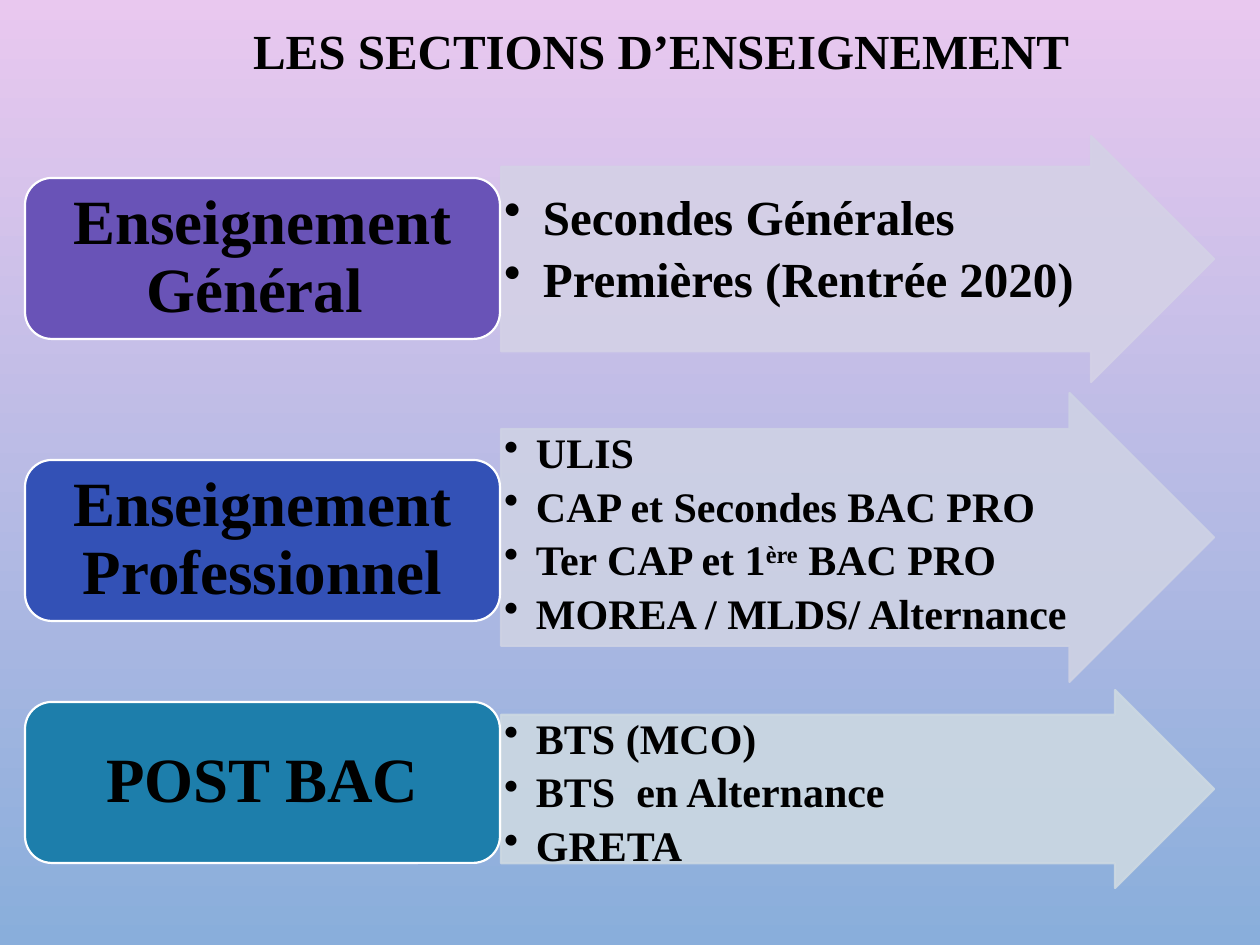
from lxml.etree import SubElement
from pptx import Presentation
from pptx.dml.color import RGBColor
from pptx.enum.shapes import MSO_SHAPE
from pptx.enum.text import MSO_ANCHOR, PP_ALIGN
from pptx.oxml.ns import qn
from pptx.util import Pt

TITLE = "LES SECTIONS D’ENSEIGNEMENT"
SECTIONS = [
    {"label": "Enseignement Général ", "color": "6953B7", "label_top": 178,
     "tint": "D4D1E6", "arrow_top": 136, "arrow_height": 246,
     "size": 28, "indent": 39, "inset_top": 26,
     "items": [["Secondes Générales"], ["Premières (Rentrée 2020)"]]},
    {"label": "Enseignement Professionnel", "color": "3351B6", "label_top": 460,
     "tint": "CED2E4", "arrow_top": 393, "arrow_height": 289,
     "size": 24, "indent": 32, "inset_top": 3,
     "items": [["ULIS"], ["CAP et Secondes BAC PRO"],
               ["Ter CAP et 1", "ère", " BAC PRO"],
               ["MOREA / MLDS/ Alternance"]]},
    {"label": "POST BAC", "color": "1D7EAB", "label_top": 702,
     "tint": "CCD8E2", "arrow_top": 690, "arrow_height": 198,
     "size": 24, "indent": 32, "inset_top": 3,
     "items": [["BTS (MCO)"], ["BTS  en Alternance"], ["GRETA"]]},
]
BACKGROUND = ["E9C8EF", "89AEDB"]
LABEL_LEFT, LABEL_WIDTH, LABEL_HEIGHT = 25, 475, 161
ARROW_LEFT, ARROW_WIDTH = 501, 713


def px(length):
    return round(length * 914400 / 126)


def rgb(value):
    return RGBColor.from_string(value)


def write(shape, paragraphs, size, align=PP_ALIGN.CENTER, anchor=MSO_ANCHOR.MIDDLE,
          insets=(19, 9, 19, 9), indent=0, after=0):
    frame = shape.text_frame
    frame.word_wrap = True
    frame.vertical_anchor = anchor
    (frame.margin_left, frame.margin_top,
     frame.margin_right, frame.margin_bottom) = map(px, insets)
    for index, parts in enumerate(paragraphs):
        paragraph = frame.add_paragraph() if index else frame.paragraphs[0]
        paragraph.alignment = align
        paragraph.line_spacing = 0.9
        paragraph.space_after = Pt(after)
        if indent:
            properties = paragraph._p.get_or_add_pPr()
            properties.set("marL", str(px(indent)))
            properties.set("indent", str(-px(indent)))
            SubElement(properties, qn("a:buChar"), char="•")
        font = paragraph.font
        font.size = Pt(size)
        for position, part in enumerate(parts):
            run = paragraph.add_run()
            run.text = part
            run.font.name = "Times New Roman"
            run.font.size = Pt(size)
            run.font.bold = True
            run.font.color.rgb = rgb("000000")
            if position == 1:
                run._r.get_or_add_rPr().set("baseline", "30000")


def add_block(slide, kind, box, fill, line, opacity=100):
    block = slide.shapes.add_shape(kind, *map(px, box))
    block.shadow.inherit = False
    block.fill.solid()
    block.fill.fore_color.rgb = rgb(fill)
    block.line.color.rgb = rgb(line)
    block.line.width = Pt(1.25)
    if opacity < 100:
        for color in block._element.spPr.iter(qn("a:srgbClr")):
            SubElement(color, qn("a:alpha"), val=str(opacity * 1000))
    return block


def main():
    deck = Presentation()
    deck.slide_width, deck.slide_height = px(1260), px(945)
    slide = deck.slides.add_slide(deck.slide_layouts[6])

    backdrop = slide.background.fill
    backdrop.gradient()
    backdrop.gradient_angle = 270
    for stop, color in zip(backdrop.gradient_stops, BACKGROUND):
        stop.color.rgb = rgb(color)

    title = slide.shapes.add_textbox(*map(px, (94, 16, 1134, 76)))
    write(title, [[TITLE]], 28)

    for section in SECTIONS:
        arrow = add_block(
            slide, MSO_SHAPE.RIGHT_ARROW,
            (ARROW_LEFT, section["arrow_top"], ARROW_WIDTH, section["arrow_height"]),
            section["tint"], section["tint"], opacity=90)
        arrow.adjustments[0] = 0.75
        arrow.adjustments[1] = 0.5
        write(arrow, section["items"], section["size"], align=PP_ALIGN.LEFT,
              anchor=MSO_ANCHOR.TOP, insets=(3, section["inset_top"], 3, 3),
              indent=section["indent"], after=section["size"] * 0.2)

        label = add_block(
            slide, MSO_SHAPE.ROUNDED_RECTANGLE,
            (LABEL_LEFT, section["label_top"], LABEL_WIDTH, LABEL_HEIGHT),
            section["color"], "FFFFFF")
        write(label, [[section["label"]]], 36)

    deck.save("out.pptx")


if __name__ == "__main__":
    main()
